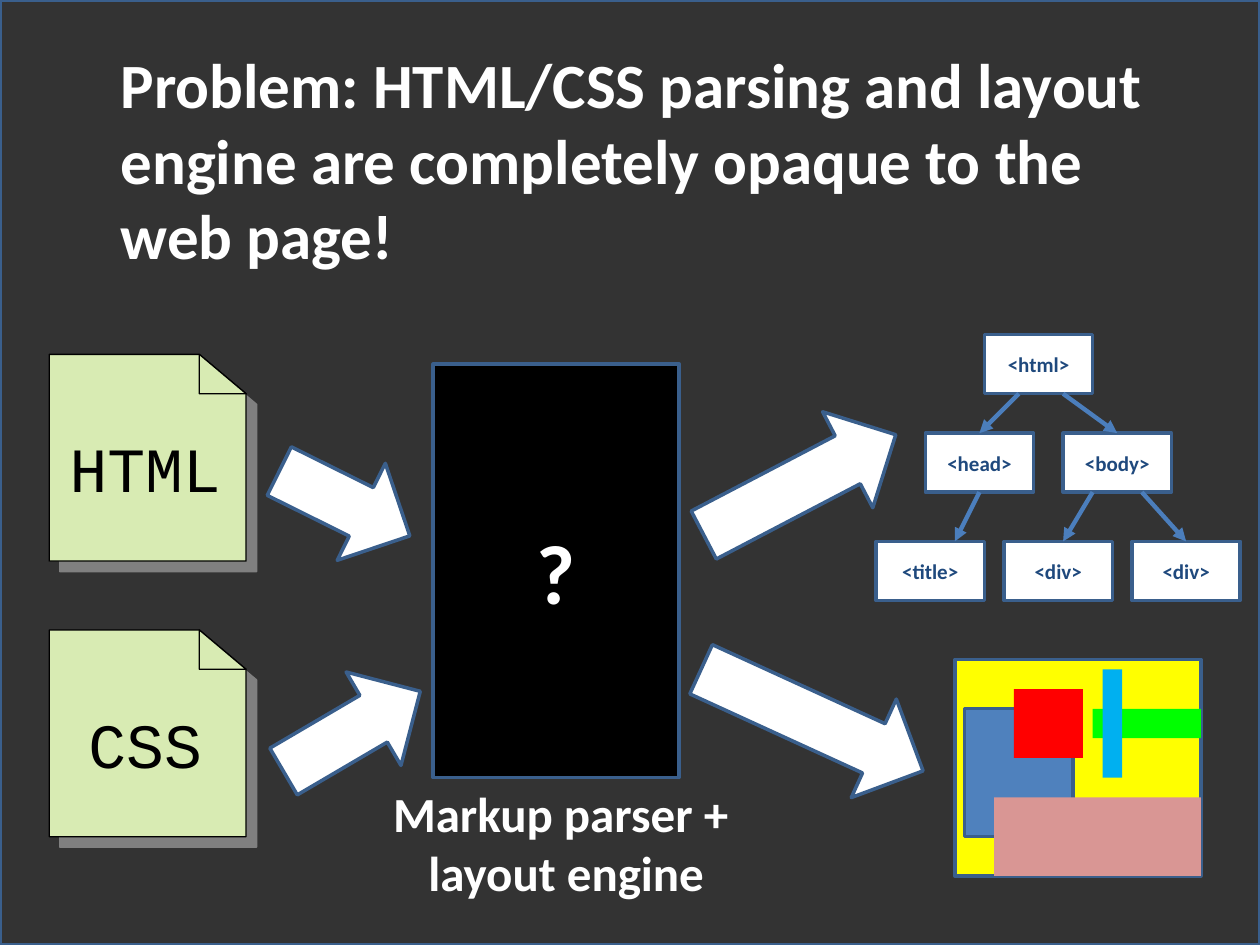
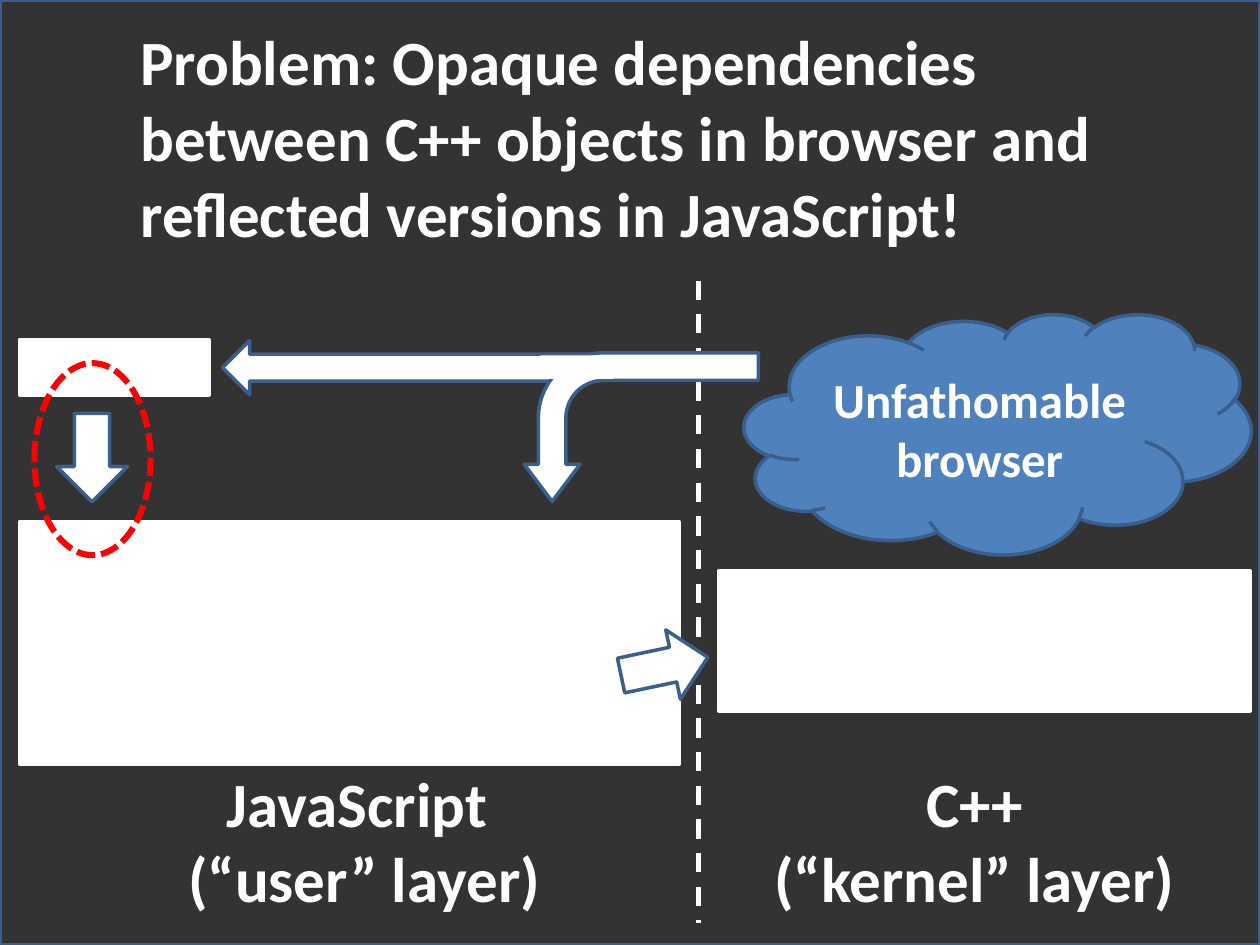
from lxml import etree
from pptx import Presentation, util as u
from pptx.dml.color import RGBColor
from pptx.enum import dml, shapes, text
from pptx.oxml import ns

# Shared style: the slide is a grid of 128 columns by 96 rows of square cells
COLS, ROWS = 128, 96
CELL = u.Inches(10) / COLS
COLORS = {
    "black": "000000", "white": "FFFFFF", "edge": "3A5F8C", "link": "4B7EBC",
    "blue": "4F81BD", "navy": "1F497D", "yellow": "FFFF00", "red": "FF0000",
    "pink": "D99694", "green": "00FF00", "cyan": "00B0F0", "paper": "D8EBB3",
    "shade": "808080",
}
KIND = shapes.MSO_SHAPE


def rgb(name):
    return RGBColor.from_string(COLORS[name])


def cells(*counts):
    return [u.Emu(round(n * CELL)) for n in counts]


def inside(box, x, y, w, h):
    """Box measured in cells from the corner of another box."""
    return box[0] + x, box[1] + y, w, h


def sub(parent, tag, **attrs):
    return etree.SubElement(parent, ns.qn(tag), attrs)


def write(tf, lines, size=36, color="white", font="Calibri", bold=True,
          align=text.PP_ALIGN.CENTER, anchor=text.MSO_ANCHOR.TOP):
    tf.word_wrap = True
    tf.vertical_anchor = anchor
    for i, line in enumerate(lines.split("\n")):
        p = tf.add_paragraph() if i else tf.paragraphs[0]
        p.alignment = align
        r = p.add_run()
        r.text = line
        r.font.size, r.font.name, r.font.bold = u.Pt(size), font, bold
        r.font.color.rgb = rgb(color)


def add_text(s, box, lines, **style):
    write(s.shapes.add_textbox(*cells(*box)).text_frame, lines, **style)


def paint(sp, fill, line, width=2):
    sp.shadow.inherit = False
    if fill:
        sp.fill.solid()
        sp.fill.fore_color.rgb = rgb(fill)
    else:
        sp.fill.background()
    if line:
        sp.line.color.rgb = rgb(line)
        sp.line.width = u.Pt(width)
    else:
        sp.line.fill.background()


def add_shape(s, box, fill="white", line="edge", width=2, kind=KIND.RECTANGLE,
              turn=0, label=None, **style):
    sp = s.shapes.add_shape(kind, *cells(*box))
    paint(sp, fill, line, width)
    sp.rotation = turn
    if label:
        write(sp.text_frame, label, anchor=text.MSO_ANCHOR.MIDDLE, **style)
    return sp


def add_arrow(s, box, turn=0):
    return add_shape(s, box, kind=KIND.DOWN_ARROW, turn=turn)


def add_line(s, start, end, color, width):
    c = s.shapes.add_connector(shapes.MSO_CONNECTOR.STRAIGHT, *cells(*start, *end))
    c.line.color.rgb = rgb(color)
    c.line.width = u.Pt(width)
    sub(c._element.spPr, "a:effectLst")
    return c


def add_outline(s, box, points):
    (x, y), *rest = [cells(box[0] + px, box[1] + py) for px, py in points]
    builder = s.shapes.build_freeform(x, y)
    builder.add_line_segments(rest, close=True)
    sp = builder.convert_to_shape()
    paint(sp, "paper", "black", 0.75)
    return sp


def new_slide(prs, title, box):
    """Dark backdrop and title common to every slide."""
    s = prs.slides.add_slide(prs.slide_layouts[6])
    sp = add_shape(s, (0, 0, COLS, ROWS), "black")
    color = sp._element.spPr.find(ns.qn("a:solidFill"))[0]
    sub(color, "a:alpha", val="80000")
    add_text(s, box, title, align=text.PP_ALIGN.LEFT)
    return s


# Regions of the parsing slide
def source_file(s, box, name):
    w, h = box[2:]
    fold_x, fold_y = w - 4.75, 4
    page = add_outline(s, box, [(0, 0), (fold_x, 0), (w, fold_y), (w, h), (0, h)])
    effects = page._element.spPr.find(ns.qn("a:effectLst"))
    shadow = sub(effects, "a:outerShdw", dist=str(u.Pt(8.5)), dir="2700000",
                 algn="ctr", rotWithShape="0")
    sub(shadow, "a:srgbClr", val=COLORS["shade"])
    add_outline(s, box, [(w, fold_y), (fold_x, fold_y), (fold_x, 0)])
    add_text(s, inside(box, 0, 7, w - 0.5, 9), name, color="black",
             font="Courier New", bold=False)


def engine(s, box):
    w, h = box[2:]
    add_shape(s, box, "black", label="?", size=48)
    add_text(s, inside(box, -10, h, w + 22, 13.3),
             "Markup parser + \nlayout engine", size=28)


def element_tree(s, box):
    node_w, node_h = 11, 6
    nodes = [("html", 11, 0), ("head", 5, 10), ("body", 19, 10),
             ("title", 0, 21), ("div", 13, 21), ("div", 26, 21)]
    # Each link: start and end column, start and end row
    links = [(14.5, 10.5, 6, 10), (19, 24.5, 6, 10), (10.5, 8, 16, 21),
             (22, 19, 16, 21), (27, 31.5, 16, 21)]
    for tag, x, y in nodes:
        add_shape(s, inside(box, x, y, node_w, node_h), label=f"<{tag}>",
                  size=12, color="navy")
    for x1, x2, y1, y2 in links:
        c = add_line(s, (box[0] + x1, box[1] + y1), (box[0] + x2, box[1] + y2),
                     "link", 2.5)
        sub(c.line._get_or_add_ln(), "a:tailEnd", type="triangle")


def rendered_page(s, box):
    add_shape(s, box, "yellow")
    blocks = [("blue", "edge", 1, 5, 11, 13), ("red", None, 6, 3, 7, 7),
              ("pink", None, 4, 14, 21, 8), ("green", None, 14, 5, 11, 3),
              ("cyan", None, 15, 1, 2, 11)]
    for fill, line, *part in blocks:
        add_shape(s, inside(box, *part), fill, line)


def parsing_slide(prs):
    s = new_slide(prs, "Problem: HTML/CSS parsing and layout engine are "
                  "completely opaque to the web page!", (11, 4, 106.5, 24.6))
    engine(s, (44, 37, 25, 42))
    element_tree(s, (89, 34, 37, 27))
    rendered_page(s, (97, 67, 25, 22))
    for i, name in enumerate(["HTML", "CSS"]):
        source_file(s, (5, 36 + 28 * i, 20, 21), name)
    # Arrows into and out of the engine
    flows = [(29.5, 43.75, 14.8, 296.4), (30.25, 66.25, 16.1, 239.6),
             (75.75, 38.25, 22, 242.4), (77, 60.75, 24.8, 294.6)]
    for x, y, length, turn in flows:
        add_arrow(s, (x, y, 11, length), turn)


# Regions of the dependencies slide
def layer_labels(s, box):
    names = ["JavaScript \n(“user” layer)", "C++\n(“kernel” layer)"]
    for i, name in enumerate(names):
        add_text(s, inside(box, 62 * i, 0, 52, box[3]), name)


def split_arrow(s, box):
    """Arrow from the browser that forks to two JavaScript objects."""
    add_arrow(s, inside(box, 16.4, -16.6, 5.5, 38.3), 90)
    bent = add_shape(s, inside(box, 35, -3.3, 15.1, 23.8),
                     kind=KIND.BENT_ARROW, turn=90)
    for i, share in enumerate([0.185, 0.188, 0.25, 0.438]):
        bent.adjustments[i] = share
    bent._element.spPr.find(ns.qn("a:xfrm")).set("flipV", "1")
    # Hides the seam where the two arrows join
    add_shape(s, inside(box, 32.3, 1.3, 7.4, 2.4), line=None)


def object_boxes(s, box):
    for part in [(0, 0, 19.2, 5.6), (0, 18.5, 67, 24.6), (71, 23.5, 54, 14.2)]:
        add_shape(s, inside(box, *part), line="white", width=2.25)


def dependencies_slide(prs):
    s = new_slide(prs, "Problem: Opaque dependencies between C++ objects in "
                  "browser and reflected versions in JavaScript!",
                  (13, 1.7, 106.5, 24.6))
    border = add_line(s, (71, 28.5), (71, 93.8), "white", 2.75)
    border.line.dash_style = dml.MSO_LINE.DASH
    layer_labels(s, (11, 77, 114, 16.8))
    add_arrow(s, (5.75, 42, 7.2, 9))
    add_shape(s, (75.6, 31.9, 51.5, 24.4), "blue", kind=KIND.CLOUD,
              label="Unfathomable\nbrowser", size=28)
    split_arrow(s, (22.6, 34.8, 54.5, 16.2))
    object_boxes(s, (2, 34.5, 125, 43.1))
    add_arrow(s, (63.9, 63.2, 7.2, 9), 258.1)
    # Ring around the hidden dependency
    ring = add_shape(s, (3.5, 36.9, 11.8, 19.5), None, "red", 3.5, KIND.OVAL)
    ring.line.dash_style = dml.MSO_LINE.SQUARE_DOT


def main():
    prs = Presentation()
    prs.slide_width, prs.slide_height = cells(COLS, ROWS)
    parsing_slide(prs)
    dependencies_slide(prs)
    prs.save("out.pptx")


if __name__ == "__main__":
    main()
